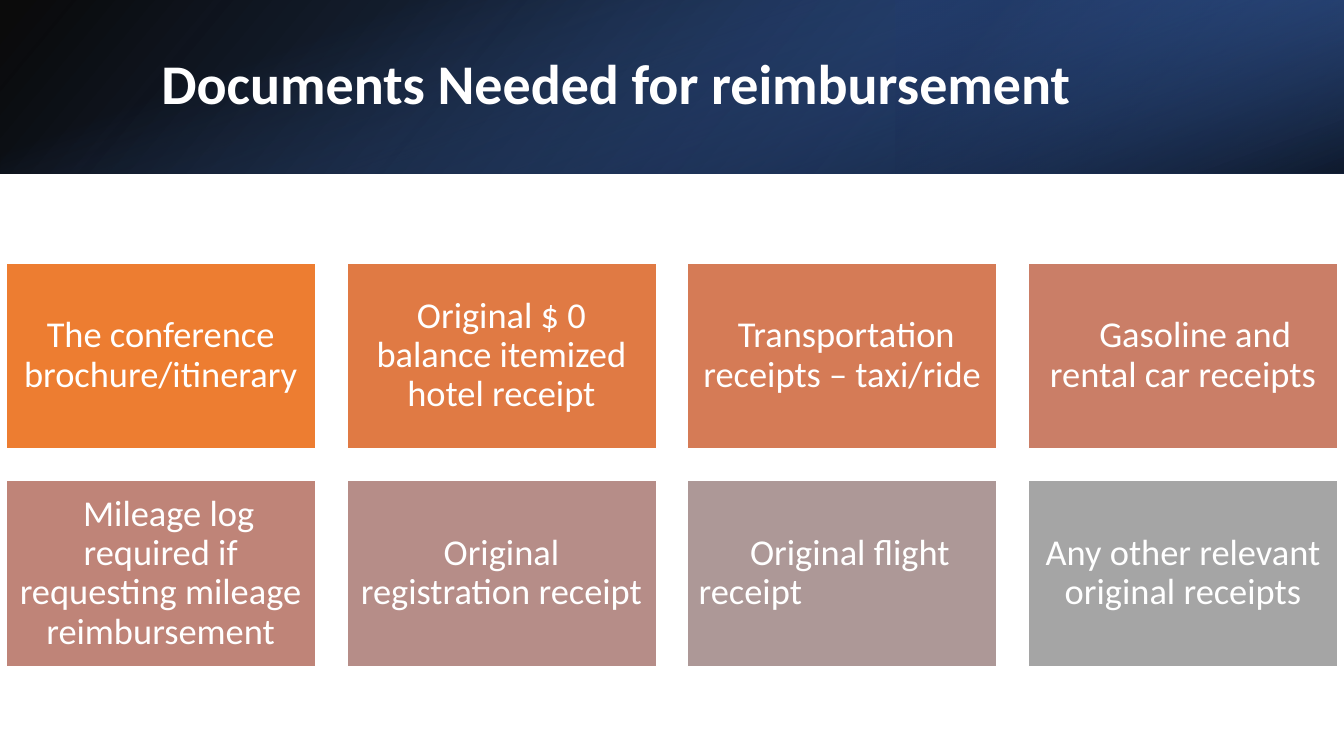
from lxml.etree import SubElement
from pptx import Presentation
from pptx.dml.color import RGBColor as RGB
from pptx.enum.shapes import MSO_SHAPE as SHAPE
from pptx.enum.text import MSO_ANCHOR as ANCHOR, PP_ALIGN as ALIGN
from pptx.oxml.ns import qn
from pptx.util import Inches, Pt

WIDTH, HEIGHT, BAND = 13.33, 7.5, 1.72
COLS, LEFT, TOP = 4, 0.06, 2.61
TILE_W, TILE_H, GAP = 3.07, 1.84, 0.31
SPACE = 0.08
COLORS = {
    "white": "FFFFFF", "black": "000000",
    "navy": "203864", "blue": "2F5597", "sky": "4472C4",
    "tile0": "ED7D31", "tile1": "E07A44", "tile2": "D57B56", "tile3": "CA7E67",
    "tile4": "BF8478", "tile5": "B68D88", "tile6": "AD9897", "tile7": "A5A5A5",
}
DOCUMENTS = [
    ("The conference brochure/itinerary", {}),
    ("Original $ 0 balance itemized hotel receipt", {}),
    ("Transportation receipts – taxi/ride", {"indent": SPACE}),
    ("Gasoline and rental car receipts", {"indent": 3 * SPACE}),
    ("Mileage log required if requesting mileage reimbursement", {"indent": 2 * SPACE}),
    ("Original registration receipt", {}),
    ("Original flight receipt", {"indent": 0.51, "align": ALIGN.LEFT}),
    ("Any other relevant original receipts", {}),
]


def color(name):
    """Return the named colour."""
    return RGB.from_string(COLORS[name])


def write(sp, text, size=26, bold=False, align=ALIGN.CENTER, indent=0, after=0):
    """Put one formatted paragraph into a shape."""
    tf = sp.text_frame
    tf.word_wrap = True
    tf.vertical_anchor = ANCHOR.MIDDLE
    p = tf.paragraphs[0]
    p.alignment, p.line_spacing, p.space_after = align, 0.9, Pt(after)
    if indent:
        p._p.get_or_add_pPr().set("indent", str(Inches(indent)))
    r = p.add_run()
    r.text = text
    r.font.name, r.font.size, r.font.bold = "Calibri", Pt(size), bold
    r.font.color.rgb = color("white")


def add_rect(s, x, y, w, h):
    """Add a rectangle without shadow, measured in inches."""
    sp = s.shapes.add_shape(SHAPE.RECTANGLE, *map(Inches, (x, y, w, h)))
    sp.shadow.inherit = False
    return sp


def add_band(s, box, stops, angle, rotation=0, flip=False):
    """Add a header layer with a gradient of (position, colour, opacity) stops."""
    sp = add_rect(s, *box)
    sp.rotation = rotation
    sp.line.fill.background()
    sp.fill.gradient()
    pr = sp.element.spPr
    if flip:
        pr.find(qn("a:xfrm")).set("flipH", "1")
    grad = pr.find(qn("a:gradFill"))
    for child in list(grad):
        grad.remove(child)
    stop_list = SubElement(grad, qn("a:gsLst"))
    for position, name, opacity in stops:
        stop = SubElement(stop_list, qn("a:gs"), pos=str(position * 1000))
        clr = SubElement(stop, qn("a:srgbClr"), val=COLORS[name])
        SubElement(clr, qn("a:alpha"), val=str(opacity * 1000))
    SubElement(grad, qn("a:lin"), ang=str(angle * 60000), scaled="0")


def add_tile(s, i, text, **fmt):
    """Add one document tile at its place in the grid."""
    row, col = divmod(i, COLS)
    sp = add_rect(s, LEFT + col * (TILE_W + GAP), TOP + row * (TILE_H + GAP + 0.01),
                  TILE_W, TILE_H)
    sp.fill.solid()
    sp.fill.fore_color.rgb = color(f"tile{i}")
    sp.line.color.rgb = color("white")
    sp.line.width = Pt(1)
    tf = sp.text_frame
    tf.margin_left = tf.margin_right = tf.margin_top = tf.margin_bottom = Inches(0.11)
    write(sp, text, **fmt)


def add_title(s, text):
    """Fill the title placeholder and lift it above the header."""
    sp = s.shapes.title
    sp.left, sp.top, sp.width, sp.height = map(Inches, (1.5, 0.38, 10.98, 0.96))
    write(sp, text, size=40, bold=True, align=ALIGN.LEFT)
    sp.element.getparent().append(sp.element)


def main():
    """Build and save the slide."""
    prs = Presentation()
    prs.slide_width, prs.slide_height = Inches(WIDTH), Inches(HEIGHT)
    s = prs.slides.add_slide(prs.slide_layouts[5])
    add_band(s, (0, 0, WIDTH, BAND), [(0, "black", 96), (100, "blue", 100)],
             140, flip=True)
    add_band(s, (WIDTH * 2 / 3, 0, WIDTH / 3, BAND),
             [(19, "navy", 68), (100, "sky", 79)], 320, rotation=180, flip=True)
    offset = (WIDTH - BAND) / 2
    add_band(s, (offset, -offset, BAND, WIDTH),
             [(23, "sky", 0), (99, "black", 74)], 340, rotation=90)
    add_title(s, "Documents Needed for reimbursement")
    for i, (text, fmt) in enumerate(DOCUMENTS):
        add_tile(s, i, text, **fmt)
    prs.save("out.pptx")


if __name__ == "__main__":
    main()
